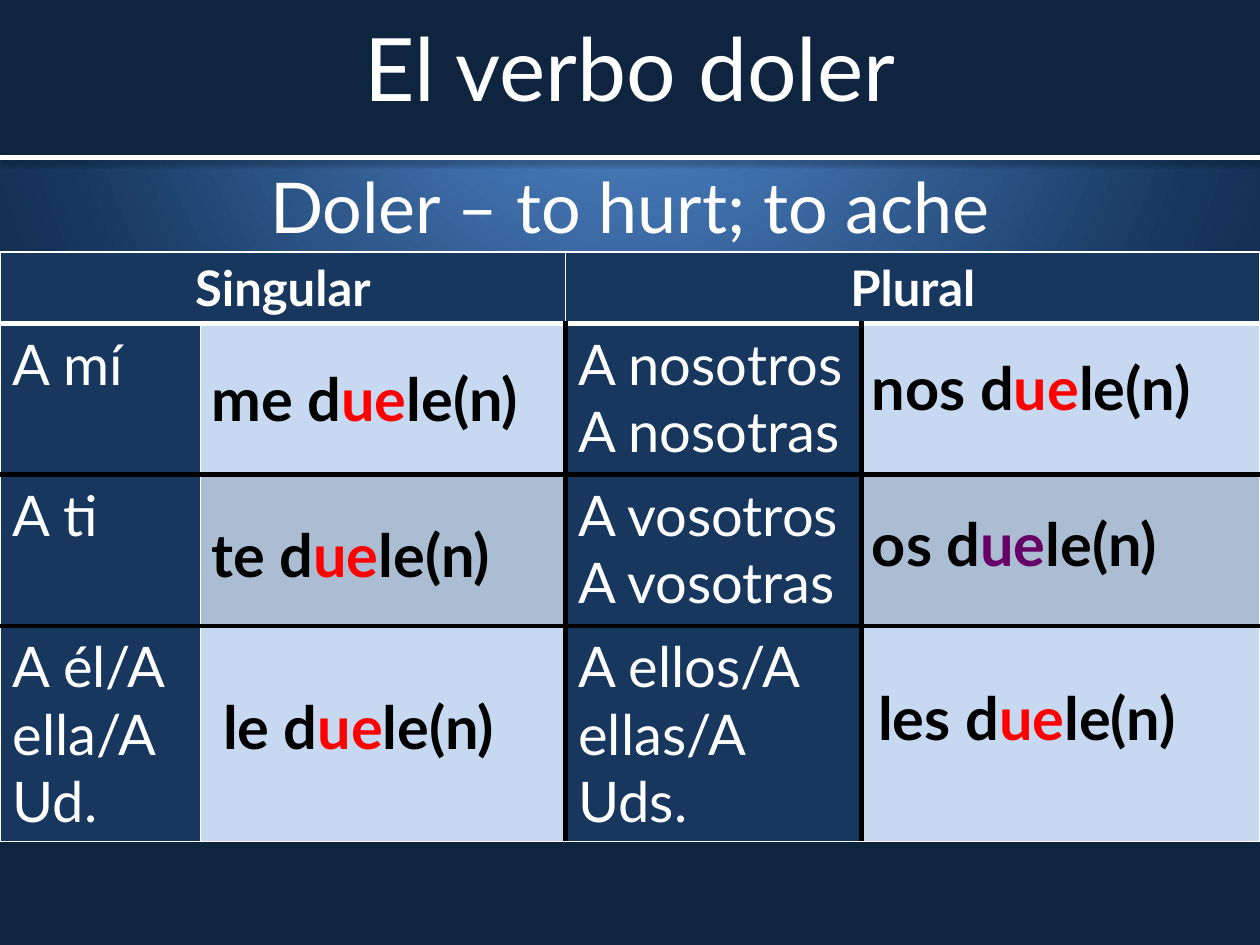
from dataclasses import dataclass

from lxml.etree import SubElement
from pptx import Presentation
from pptx.dml.color import RGBColor
from pptx.enum.shapes import MSO_CONNECTOR as Connector, MSO_SHAPE as Shape
from pptx.enum.text import MSO_ANCHOR as Anchor, MSO_AUTO_SIZE as AutoSize, PP_ALIGN as Align
from pptx.oxml import parse_xml
from pptx.oxml.ns import nsdecls, qn
from pptx.util import Inches, Pt


@dataclass(frozen=True)
class Theme:
    font: str = "Lato"
    white: str = "FFFFFF"
    black: str = "000000"
    night: str = "0F243E"
    navy: str = "17375E"
    sky: str = "558ED5"
    pale: str = "C6D9F1"
    muted: str = "ABBDD2"
    red: str = "FF0000"
    purple: str = "660066"
    title_size: int = 50
    subtitle_size: int = 40
    header_size: int = 28
    pronoun_size: int = 32
    verb_size: int = 34


@dataclass(frozen=True)
class VerbForm:
    pronoun: str
    left: float
    top: float
    width: float
    stem_color: str


@dataclass(frozen=True)
class Border:
    color: str
    points: float


THEME = Theme()
THIN = Border(THEME.white, 1)
HEADER_RULE = Border(THEME.white, 3)
GRID_RULE = Border(THEME.black, 3)
SIDES = ("L", "R", "T", "B")

COLUMN_WIDTHS = (1.59, 2.9, 2.35, 3.16)
ROW_HEIGHTS = (0.56, 1.2, 1.2, 1.71)
HEADERS = ("Singular", "Plural")
PERSONS = (
    (("A mí",), ("A nosotros", "A nosotras")),
    (("A ti",), ("A vosotros", "A vosotras")),
    (("A él/A ella/A Ud.",), ("A ellos/A ellas/A Uds.",)),
)
VERB_FORMS = (
    VerbForm("me", 1.58, 2.83, 2.81, THEME.red),
    VerbForm("te", 1.58, 4.07, 2.97, THEME.red),
    VerbForm("le", 1.67, 5.43, 2.73, THEME.red),
    VerbForm("nos", 6.82, 2.74, 3.31, THEME.red),
    VerbForm("os", 6.82, 3.98, 2.52, THEME.purple),
    VerbForm("les", 6.87, 5.36, 3.07, THEME.red),
)


def rgb(color: str) -> RGBColor:
    return RGBColor.from_string(color)


def add_run(paragraph, text: str, size: int, color: str = THEME.white, bold: bool = False) -> None:
    run = paragraph.add_run()
    run.text = text
    run.font.name = THEME.font
    run.font.size = Pt(size)
    run.font.bold = bold
    run.font.color.rgb = rgb(color)


def set_background(slide) -> None:
    """Use a radial gradient centred above the slide."""
    slide.background.fill.solid()
    stops = "".join(
        f'<a:gs pos="{position * 1000}"><a:srgbClr val="{color}"/></a:gs>'
        for position, color in ((0, THEME.sky), (75, THEME.navy), (100, THEME.night))
    )
    gradient = parse_xml(
        f'<a:gradFill {nsdecls("a")} rotWithShape="1"><a:gsLst>{stops}</a:gsLst>'
        '<a:path path="circle"><a:fillToRect l="50000" t="-80000" r="50000" b="180000"/>'
        "</a:path></a:gradFill>"
    )
    properties = slide.element.find(".//" + qn("p:bgPr"))
    properties.replace(properties.find(qn("a:solidFill")), gradient)


def add_title_band(slide) -> None:
    band = slide.shapes.add_shape(Shape.RECTANGLE, 0, 0, Inches(10), Inches(1.25))
    band.shadow.inherit = False
    band.fill.solid()
    band.fill.fore_color.rgb = rgb(THEME.night)
    band.line.fill.background()


def add_title_rule(slide) -> None:
    rule = slide.shapes.add_connector(Connector.STRAIGHT, 0, Inches(1.25), Inches(10), Inches(1.25))
    rule.line.color.rgb = rgb(THEME.white)
    rule.line.width = Pt(3)
    rule.element.spPr.append(parse_xml(
        f'<a:effectLst {nsdecls("a")}><a:outerShdw blurRad="{Pt(3.1)}" dist="{Pt(1.6)}" '
        f'dir="5400000" rotWithShape="0"><a:srgbClr val="{THEME.black}">'
        '<a:alpha val="38000"/></a:srgbClr></a:outerShdw></a:effectLst>'
    ))


def fill_placeholder(slide, placeholder, text: str, size: int, top: float, height: float, anchor) -> None:
    """Place full-width centred text and bring it in front of earlier shapes."""
    placeholder.left, placeholder.top = 0, Inches(top)
    placeholder.width, placeholder.height = Inches(10), Inches(height)
    frame = placeholder.text_frame
    frame.auto_size = AutoSize.NONE
    frame.vertical_anchor = anchor
    frame.paragraphs[0].alignment = Align.CENTER
    add_run(frame.paragraphs[0], text, size)
    slide.shapes.element.append(placeholder.element)


def set_borders(cell, borders: dict[str, Border | None]) -> None:
    properties = cell._tc.get_or_add_tcPr()
    for index, side in enumerate(SIDES):
        border = borders[side]
        line = properties.makeelement(qn(f"a:ln{side}"))
        properties.insert(index, line)
        if border is None:
            line.set("w", "0")
            SubElement(line, qn("a:noFill"))
        else:
            line.set("w", str(Pt(border.points)))
            SubElement(SubElement(line, qn("a:solidFill")), qn("a:srgbClr")).set("val", border.color)


def add_plain_table(slide, left: float, top: float, widths, heights):
    frame = slide.shapes.add_table(len(heights), len(widths), Inches(left), Inches(top),
                                   Inches(sum(widths)), Inches(sum(heights)))
    table = frame.table
    table.first_row = table.horz_banding = False
    for column, width in zip(table.columns, widths):
        column.width = Inches(width)
    for row, height in zip(table.rows, heights):
        row.height = Inches(height)
    return table


def grid_borders(row: int, column: int) -> dict[str, Border]:
    if row == 0:
        return {"L": THIN, "R": THIN, "T": THIN, "B": HEADER_RULE}
    return {
        "L": GRID_RULE if column >= 2 else THIN,
        "R": GRID_RULE if column in (1, 2) else THIN,
        "T": HEADER_RULE if row == 1 else GRID_RULE,
        "B": THIN if row == len(PERSONS) else GRID_RULE,
    }


def add_person_table(slide) -> None:
    table = add_plain_table(slide, 0, 2, COLUMN_WIDTHS, ROW_HEIGHTS)
    for row in range(len(ROW_HEIGHTS)):
        for column in range(len(COLUMN_WIDTHS)):
            cell = table.cell(row, column)
            verb_fill = THEME.muted if row == 2 else THEME.pale
            cell.fill.solid()
            cell.fill.fore_color.rgb = rgb(verb_fill if row and column % 2 else THEME.navy)
            set_borders(cell, grid_borders(row, column))
    for index, header in enumerate(HEADERS):
        cell = table.cell(0, 2 * index)
        cell.merge(table.cell(0, 2 * index + 1))
        paragraph = cell.text_frame.paragraphs[0]
        paragraph.alignment = Align.CENTER
        add_run(paragraph, header, THEME.header_size, bold=True)
    for row, groups in enumerate(PERSONS, start=1):
        for index, lines in enumerate(groups):
            frame = table.cell(row, 2 * index).text_frame
            for number, line in enumerate(lines):
                paragraph = frame.add_paragraph() if number else frame.paragraphs[0]
                add_run(paragraph, line, THEME.pronoun_size)


def add_verb_form(slide, form: VerbForm) -> None:
    cell = add_plain_table(slide, form.left, form.top, (form.width,), (0.67,)).cell(0, 0)
    cell.fill.background()
    set_borders(cell, dict.fromkeys(SIDES))
    paragraph = cell.text_frame.paragraphs[0]
    for text, color in ((f"{form.pronoun} d", THEME.black), ("ue", form.stem_color), ("le(n)", THEME.black)):
        add_run(paragraph, text, THEME.verb_size, color, bold=True)


def main() -> None:
    presentation = Presentation()
    presentation.slide_width, presentation.slide_height = Inches(10), Inches(7.5)
    slide = presentation.slides.add_slide(presentation.slide_layouts[0])
    title, subtitle = slide.placeholders
    set_background(slide)
    add_title_band(slide)
    fill_placeholder(slide, subtitle, "Doler – to hurt; to ache", THEME.subtitle_size, 1.25, 5.2, Anchor.TOP)
    add_title_rule(slide)
    fill_placeholder(slide, title, "El verbo doler", THEME.title_size, 0, 1.06, Anchor.MIDDLE)
    add_person_table(slide)
    for form in VERB_FORMS:
        add_verb_form(slide, form)
    presentation.save("out.pptx")


if __name__ == "__main__":
    main()
